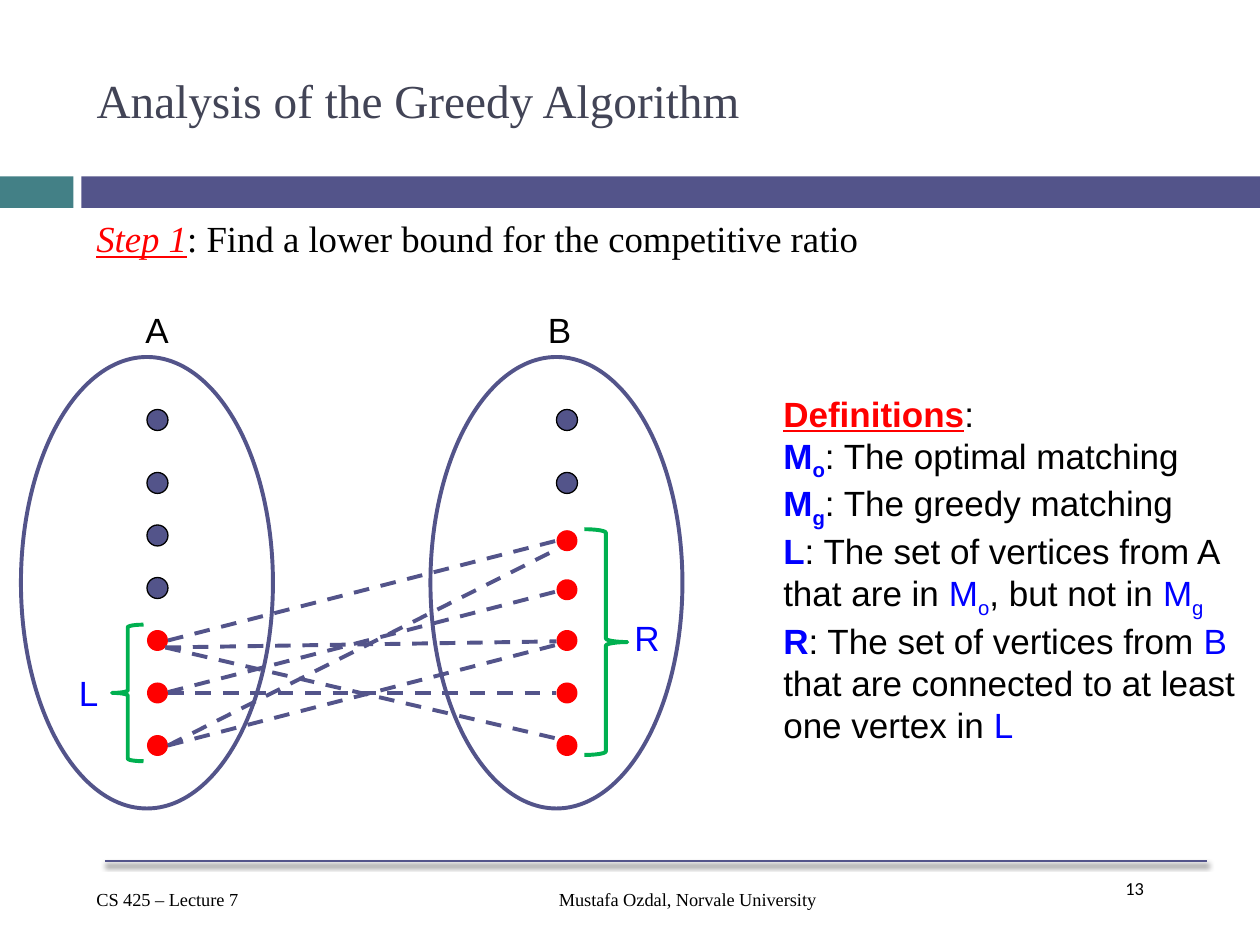
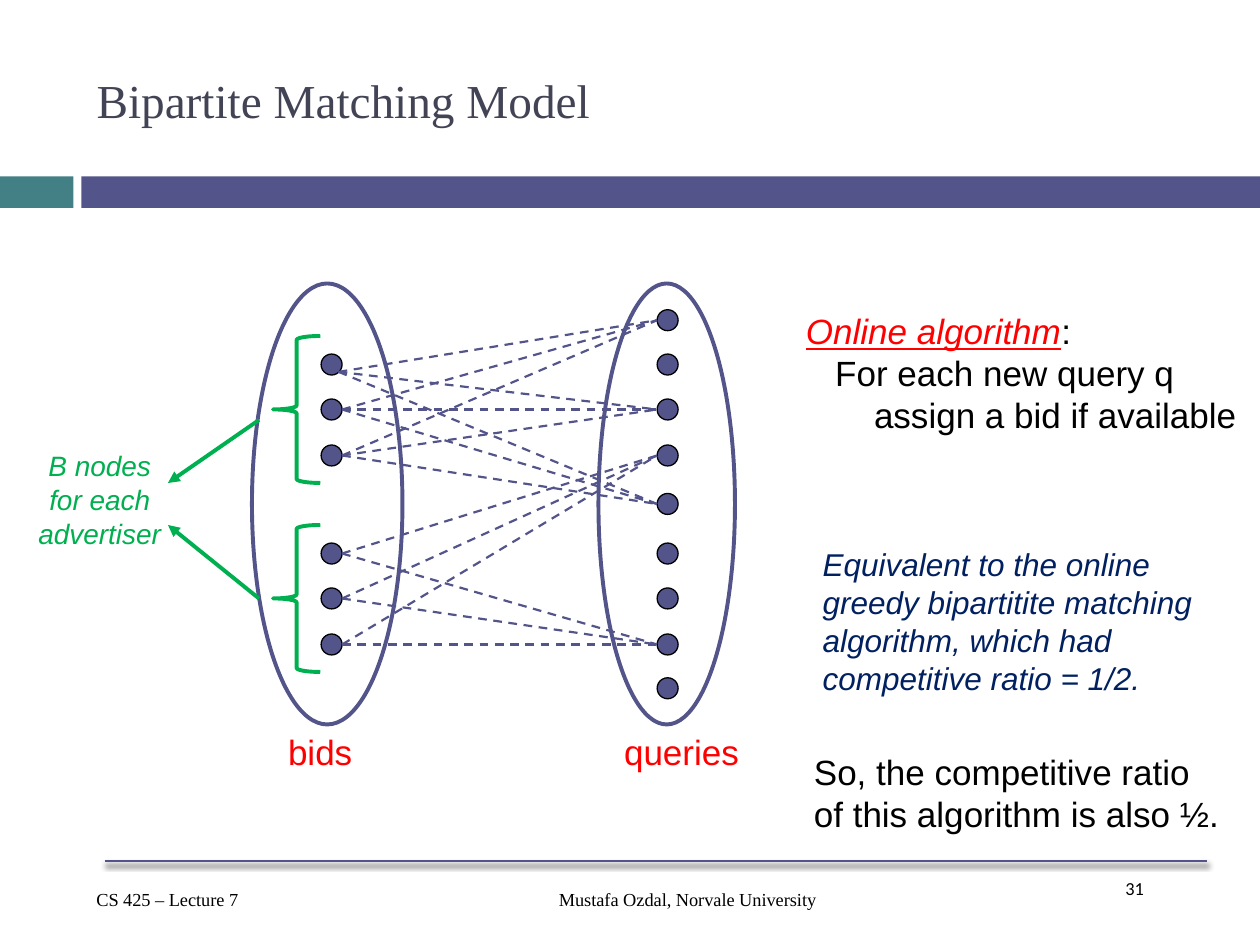
import pptx
import pptx.util
import pptx.dml.color
import pptx.enum.dml
import pptx.enum.shapes
import pptx.enum.text
import pptx.oxml
import pptx.oxml.ns

Pt = pptx.util.Pt
RGB = pptx.dml.color.RGBColor.from_string
SHAPE = pptx.enum.shapes.MSO_SHAPE
ALIGN = pptx.enum.text.PP_ALIGN
NS = pptx.oxml.ns.nsdecls("a")
COLORS = {
    "black": "000000", "indigo": "53548A", "teal": "438086", "slate": "424456",
    "red": "FF0000", "green": "00B050", "blue": "0000FF", "navy": "002060",
}
SERIF = "Times New Roman"
SHADOW = (f'<a:effectLst {NS}><a:outerShdw blurRad="38100" dist="30480" dir="5400000">'
          '<a:srgbClr val="000000"><a:alpha val="45000"/></a:srgbClr>'
          '</a:outerShdw></a:effectLst>')


def add_shape(s, kind, box, fill=None, line=None, width=2.25):
    sp = s.shapes.add_shape(kind, *map(Pt, box))
    sp.shadow.inherit = False
    if fill:
        sp.fill.solid()
        sp.fill.fore_color.rgb = RGB(COLORS[fill])
    else:
        sp.fill.background()
    if line:
        sp.line.color.rgb = RGB(COLORS[line])
        sp.line.width = Pt(width)
    else:
        sp.line.fill.background()


def add_text(s, box, paragraphs, size=20, color="black", font="Arial", italic=False):
    """Add paragraphs, each a string or a list of (text, color, flags).

    Flags: b bold, i italic, u underline, s subscript.
    """
    tf = s.shapes.add_textbox(*map(Pt, box)).text_frame
    tf.word_wrap = True
    for i, content in enumerate(paragraphs):
        p = tf.paragraphs[0] if i == 0 else tf.add_paragraph()
        p.font.size = Pt(size)
        p.font.name = font
        if isinstance(content, str):
            p.text = content
            p.font.color.rgb = RGB(COLORS[color])
            p.font.italic = italic
            continue
        for text, run_color, flags in content:
            r = p.add_run()
            r.text = text
            r.font.color.rgb = RGB(COLORS[run_color])
            r.font.bold = "b" in flags
            r.font.italic = "i" in flags
            r.font.underline = "u" in flags
            if "s" in flags:
                r.font._element.set("baseline", "-25000")
    return tf


prs = pptx.Presentation()
prs.slide_width, prs.slide_height = Pt(720), Pt(540)
lines = []  # (slide, start, end, color, width, style)

# Titles, bands and footers
for title, number in (("Analysis of the Greedy Algorithm", 13),
                      ("Bipartite Matching Model", 31)):
    s = prs.slides.add_slide(prs.slide_layouts[5])
    add_shape(s, SHAPE.RECTANGLE, (0, 100.8, 42, 18), "teal")
    add_shape(s, SHAPE.RECTANGLE, (46.5, 100.8, 673.5, 18), "indigo")
    lines.append((s, (60, 492), (690, 492), "indigo", 1.5, "shadow"))
    add_text(s, (636, 498, 54, 36), [str(number)], 10.5, font="Calibri")
    add_text(s, (48, 504, 132, 20), ["CS 425 – Lecture 7"], 10.5, font=SERIF)
    tf = add_text(s, (186, 504, 414, 24), ["Mustafa Ozdal, Norvale University"],
                  10.5, font=SERIF)
    tf.paragraphs[0].alignment = ALIGN.CENTER
    sp = s.shapes.title
    sp.left, sp.top, sp.width, sp.height = Pt(48), Pt(18), Pt(642), Pt(78)
    tf = sp.text_frame
    tf.text = title
    tf.vertical_anchor = pptx.enum.text.MSO_ANCHOR.MIDDLE
    p = tf.paragraphs[0]
    p.alignment = ALIGN.LEFT
    p.font.size = Pt(27)
    p.font.name = SERIF
    p.font.color.rgb = RGB(COLORS["slate"])

greedy, matching = prs.slides
DOT = 12

# Greedy algorithm: sets A and B, with the vertices of L and R in red
s = greedy
add_text(s, (48, 120, 642, 48), [[
    ("Step 1", "red", "iu"),
    (": Find a lower bound for the competitive ratio", "black", "")]], 21, font=SERIF)
a_tops = (234, 270, 300, 330, 360, 390, 420)
b_tops = (234, 270, 303, 331, 360, 390, 420)
for x, tops, plain_count in ((84, a_tops, 4), (318, b_tops, 2)):
    add_shape(s, SHAPE.OVAL, (x - 72, 204, 144, 258), line="indigo")
    for i, y in enumerate(tops):
        if i < plain_count:
            add_shape(s, SHAPE.OVAL, (x, y, DOT, DOT), "indigo", "black", 0.75)
        else:
            add_shape(s, SHAPE.OVAL, (x, y, DOT, DOT), "red")
add_shape(s, SHAPE.LEFT_BRACE, (64, 357, 18, 78), line="green")
add_shape(s, SHAPE.RIGHT_BRACE, (334, 302.4, 24.5, 129), line="green")
for label, x, y, color in (("A", 76, 173, "black"), ("B", 306, 173, "black"),
                           ("L", 38, 380, "blue"), ("R", 355.5, 348.5, "blue")):
    add_text(s, (x, y, 36, 32), [label], color=color)
for start, end in (
        ((96, 366), (318, 309)), ((96, 395.5), (318, 338)), ((96, 426), (318, 368.5)),
        ((96, 396), (318, 396)), ((94.5, 370), (318, 422)), ((94.5, 370), (318, 366.5)),
        ((96, 426), (320, 313))):
    lines.append((s, start, end, "indigo", 2.25, "dash"))
add_text(s, (440.5, 220.5, 281, 201), [
    [("Definitions", "red", "bu"), (":", "black", "")],
    [("M", "blue", "b"), ("o", "blue", "bs"), (": The optimal matching", "black", "")],
    [("M", "blue", "b"), ("g", "blue", "bs"), (": The greedy matching", "black", "")],
    [("L", "blue", "b"), (": The set of vertices from A that are in ", "black", ""),
     ("M", "blue", ""), ("o", "blue", "s"), (", but not in ", "black", ""),
     ("M", "blue", ""), ("g", "blue", "s")],
    [("R", "blue", "b"), (": The set of vertices from ", "black", ""), ("B", "blue", ""),
     (" that are connected to at least one vertex in ", "black", ""), ("L", "blue", "")],
])

# Bipartite model: two groups of bids against the queries
s = matching
bid_tops = (202.3, 228, 254.3, 310.3, 336, 362.3)
query_tops = (177, 202.3, 228, 254.3, 282, 310.3, 336, 362.3, 387.3)
for x, tops in ((183.5, bid_tops), (375.5, query_tops)):
    for y in tops:
        add_shape(s, SHAPE.OVAL, (x, y, DOT, DOT), "indigo", "black", 0.75)
for x, width in ((144, 86), (342, 78)):
    add_shape(s, SHAPE.OVAL, (x, 162, width, 252), line="indigo")
for y in (192, 300):
    add_shape(s, SHAPE.LEFT_BRACE, (156, y, 27, 84), line="green")
bid_ends = [(195.5, y + DOT / 2) for y in bid_tops]
bid_ends[0] = (193.5, 212.5)
for ends, queries in ((bid_ends[:3], (0, 2, 4)), (bid_ends[3:], (3, 7))):
    for start in ends:
        for q in queries:
            end = (375.5, query_tops[q] + DOT / 2)
            lines.append((s, start, end, "indigo", 1.25, "dash"))
for start, end in (((148, 240), (96, 276)), ((148, 342), (96, 300))):
    lines.append((s, start, end, "green", 2.25, "arrow"))
tf = add_text(s, (11, 253, 92, 65), ["B nodes", "for each", "advertiser"],
              16, "green", italic=True)
for p in tf.paragraphs:
    p.alignment = ALIGN.CENTER
add_text(s, (157.5, 414, 60, 32), ["bids"], color="red")
add_text(s, (349.5, 414, 90, 32), ["queries"], color="red")
tf = add_text(s, (453.5, 173.5, 266.5, 80), [
    [("Online algorithm", "red", "iu"), (":", "black", "")],
    "For each new query q", "assign a bid if available"])
for p, indent in zip(tf.paragraphs[1:], (16.7, 38.9)):
    p._p.get_or_add_pPr().set("marL", str(Pt(indent)))
add_text(s, (463, 308, 247, 94), [
    "Equivalent to the online greedy bipartitite matching algorithm, "
    "which had competitive ratio = 1/2."], 18, "navy", italic=True)
add_text(s, (458, 425.5, 254, 56), ["So, the competitive ratio",
                                    "of this algorithm is also ½."])

# Rules, edges and arrows
for s, start, end, color, width, style in lines:
    cn = s.shapes.add_connector(pptx.enum.shapes.MSO_CONNECTOR.STRAIGHT,
                                *map(Pt, start + end))
    cn.line.color.rgb = RGB(COLORS[color])
    cn.line.width = Pt(width)
    if style == "dash":
        cn.line.dash_style = pptx.enum.dml.MSO_LINE.DASH
    elif style == "arrow":
        cn.line._get_or_add_ln().append(
            pptx.oxml.parse_xml(f'<a:tailEnd {NS} type="triangle"/>'))
    effects = SHADOW if style == "shadow" else f"<a:effectLst {NS}/>"
    cn._element.spPr.append(pptx.oxml.parse_xml(effects))

prs.save("out.pptx")
